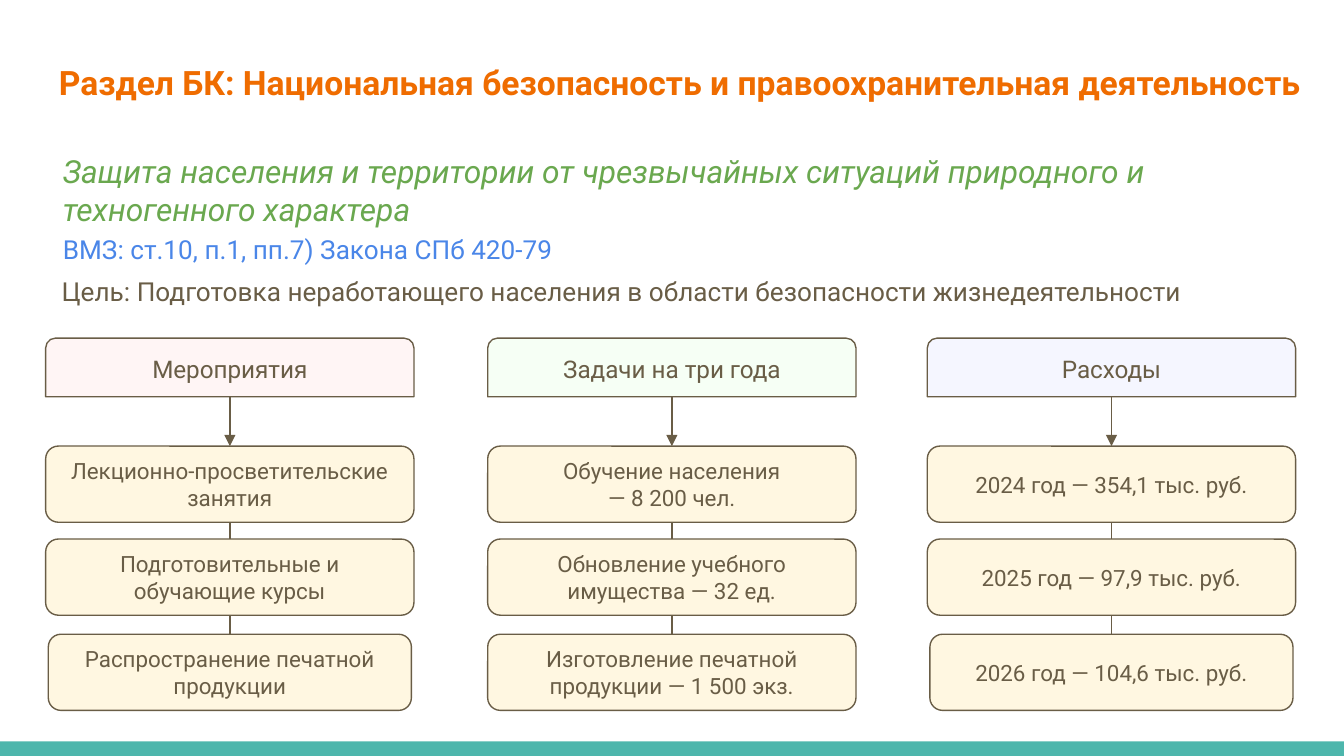
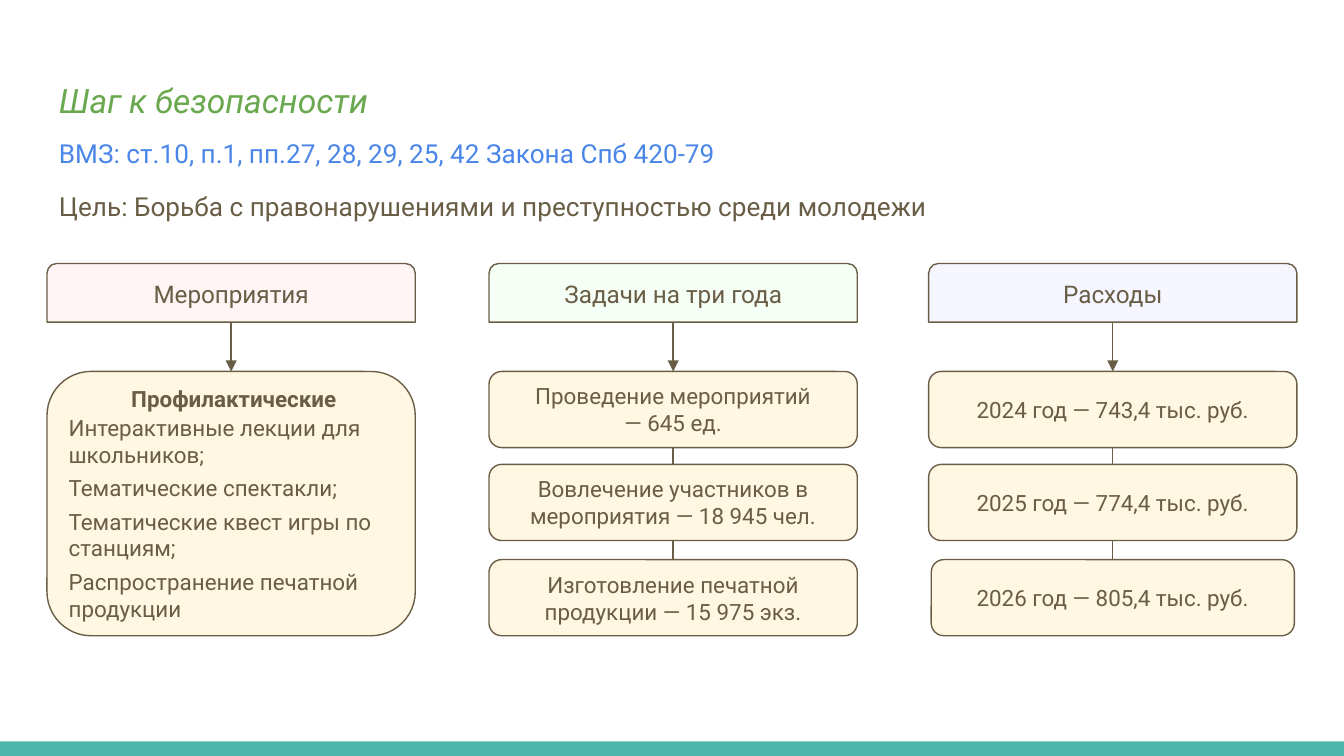
from dataclasses import dataclass
from typing import Optional

import pptx
import pptx.dml.color
import pptx.enum.shapes
import pptx.enum.text
import pptx.oxml.ns
import pptx.util
from lxml import etree
from pptx.shapes.autoshape import Shape
from pptx.slide import Slide
from pptx.text.text import TextFrame

Pt = pptx.util.Pt
SHAPES = pptx.enum.shapes.MSO_SHAPE
ANCHOR = pptx.enum.text.MSO_ANCHOR
ALIGN = pptx.enum.text.PP_ALIGN

# Shared look
FONT = "Roboto"
BROWN, ORANGE, GREEN, BLUE = "695D46", "EF6C00", "6AA84F", "4A86E8"
TEAL, CREAM, WHITE = "4DB6AC", "FFF7E1", "FFFFFF"
PAGE_WIDTH, PAGE_HEIGHT, BAND_HEIGHT = 720, 405, 7.8
INSET = 7.2

# Flow grid, measured from the top of the column headers
COLUMN_WIDTH, HEADER_HEIGHT, BOX_HEIGHT = 197.3, 31.4, 40.8
ROW_OFFSETS = (57.8, 107.6, 158.6)
LAST_BOX_INSET = 1.4


@dataclass(frozen=True)
class Heading:
    text: str
    left: float
    top: float
    width: float
    size: float
    color: str
    bold: bool = False
    italic: bool = False
    spacing: Optional[float] = None


@dataclass(frozen=True)
class Column:
    title: str
    left: float
    fill: str
    narrow_last: bool = False


@dataclass(frozen=True)
class Topic:
    headings: tuple[Heading, ...]
    flow_left: float
    flow_top: float
    boxes: tuple[tuple[str, ...], ...]


COLUMNS = (
    Column("Мероприятия", 0, "FFF5F5", narrow_last=True),
    Column("Задачи на три года", 236.8, "F6FFF5"),
    Column("Расходы", 472.3, "F5F6FF", narrow_last=True),
)

PREVENTION_TITLE = "Профилактические"
PREVENTION_ITEMS = (
    "Интерактивные лекции для школьников;",
    "Тематические спектакли;",
    "Тематические квест игры по станциям;",
    "Распространение печатной продукции",
)

PROTECTION = Topic(
    headings=(
        Heading("Раздел БК: Национальная безопасность и правоохранительная деятельность",
                24.5, 23, 681.1, 18, ORANGE, bold=True, spacing=1.15),
        Heading("Защита населения и территории от чрезвычайных ситуаций природного "
                "и техногенного характера", 26.6, 74.2, 681.1, 17, GREEN, italic=True),
        Heading("ВМЗ: ст.10, п.1, пп.7) Закона СПб 420-79", 26.6, 118.1, 676.8, 14, BLUE),
        Heading("Цель: Подготовка неработающего населения в области безопасности "
                "жизнедеятельности", 25.9, 140.4, 668.2, 14, BROWN),
    ),
    flow_left=24.5,
    flow_top=181.2,
    boxes=(
        ("Лекционно-просветительские занятия",
         "Подготовительные и обучающие курсы",
         "Распространение печатной продукции"),
        ("Обучение населения\n— 8 200 чел.",
         "Обновление учебного имущества — 32 ед.",
         "Изготовление печатной продукции — 1 500 экз."),
        ("2024 год — 354,1 тыс. руб.",
         "2025 год — 97,9 тыс. руб.",
         "2026 год — 104,6 тыс. руб."),
    ),
)

SAFETY_STEP = Topic(
    headings=(
        Heading("Шаг к безопасности", 24.5, 32.4, 671, 18, GREEN, italic=True, spacing=1.15),
        Heading("ВМЗ: ст.10, п.1, пп.27, 28, 29, 25, 42 Закона Спб 420-79",
                24.5, 66.2, 676.1, 14, BLUE),
        Heading("Цель: Борьба с правонарушениями и преступностью среди молодежи",
                24.5, 95, 665.3, 14, BROWN),
    ),
    flow_left=25.2,
    flow_top=141.2,
    boxes=(
        (),
        ("Проведение мероприятий\n— 645 ед.",
         "Вовлечение участников в мероприятия — 18 945 чел.",
         "Изготовление печатной продукции — 15 975 экз."),
        ("2024 год — 743,4 тыс. руб.",
         "2025 год — 774,4 тыс. руб.",
         "2026 год — 805,4 тыс. руб."),
    ),
)


def rgb(value: str) -> pptx.dml.color.RGBColor:
    return pptx.dml.color.RGBColor.from_string(value)


def write(frame: TextFrame, text: str, *, size: float, color: str = BROWN,
          bold: bool = False, italic: bool = False, align: ALIGN = ALIGN.LEFT,
          spacing: Optional[float] = None, before: float = 0) -> None:
    """Add each line of text as a paragraph, starting in an empty first one."""
    for line in text.split("\n"):
        para = frame.paragraphs[0] if not frame.text else frame.add_paragraph()
        para.alignment = align
        para.space_before = Pt(before)
        if spacing:
            para.line_spacing = spacing
        span = para.add_run()
        span.text = line
        span.font.name = FONT
        span.font.size = Pt(size)
        span.font.bold = bold
        span.font.italic = italic
        span.font.color.rgb = rgb(color)


def set_frame(frame: TextFrame, anchor: ANCHOR, left: float = INSET, top: float = 0,
              right: float = INSET, bottom: float = 0) -> None:
    frame.word_wrap = True
    frame.vertical_anchor = anchor
    frame.margin_left, frame.margin_top = Pt(left), Pt(top)
    frame.margin_right, frame.margin_bottom = Pt(right), Pt(bottom)


def add_box(page: Slide, kind: SHAPES, left: float, top: float, width: float,
            height: float, fill: str, outline: Optional[str] = BROWN) -> Shape:
    box = page.shapes.add_shape(kind, Pt(left), Pt(top), Pt(width), Pt(height))
    box.shadow.inherit = False
    box.fill.solid()
    box.fill.fore_color.rgb = rgb(fill)
    if outline:
        box.line.color.rgb = rgb(outline)
        box.line.width = Pt(0.75)
    else:
        box.line.fill.background()
    set_frame(box.text_frame, ANCHOR.MIDDLE)
    return box


def add_heading(page: Slide, heading: Heading) -> None:
    box = page.shapes.add_textbox(Pt(heading.left), Pt(heading.top),
                                  Pt(heading.width), Pt(31.7))
    set_frame(box.text_frame, ANCHOR.TOP, INSET, INSET, INSET, INSET)
    write(box.text_frame, heading.text, size=heading.size, color=heading.color,
          bold=heading.bold, italic=heading.italic, spacing=heading.spacing)


def add_link(page: Slide, upper: Shape, lower: Shape, arrow: bool) -> None:
    middle = upper.left + upper.width // 2
    line = page.shapes.add_connector(pptx.enum.shapes.MSO_CONNECTOR.STRAIGHT, middle,
                                     upper.top + upper.height, middle, lower.top)
    line.line.color.rgb = rgb(BROWN)
    line.line.width = Pt(0.75)
    if arrow:
        outline = line.line._get_or_add_ln()
        etree.SubElement(outline, pptx.oxml.ns.qn("a:tailEnd"), type="triangle")
    else:
        line.begin_connect(upper, 2)
    line.end_connect(lower, 0)
    etree.SubElement(line._element.spPr, pptx.oxml.ns.qn("a:effectLst"))


def add_prevention_box(page: Slide, left: float, top: float) -> Shape:
    height = ROW_OFFSETS[-1] - ROW_OFFSETS[0] + BOX_HEIGHT
    box = add_box(page, SHAPES.ROUNDED_RECTANGLE, left, top, COLUMN_WIDTH, height, CREAM)
    set_frame(box.text_frame, ANCHOR.TOP, left=4.7, top=0.3, right=1.7)
    write(box.text_frame, PREVENTION_TITLE, size=12, bold=True, align=ALIGN.CENTER)
    for index, item in enumerate(PREVENTION_ITEMS):
        write(box.text_frame, item, size=12, before=3.5 if index else 1.2)
    return box


def add_column(page: Slide, column: Column, topic: Topic, texts: tuple[str, ...]) -> None:
    left = topic.flow_left + column.left
    header = add_box(page, SHAPES.ROUND_2_SAME_RECTANGLE, left, topic.flow_top,
                     COLUMN_WIDTH, HEADER_HEIGHT, column.fill)
    write(header.text_frame, column.title, size=13, align=ALIGN.CENTER)
    if not texts:
        box = add_prevention_box(page, left, topic.flow_top + ROW_OFFSETS[0])
        add_link(page, header, box, arrow=True)
        return
    above = header
    for row, (text, offset) in enumerate(zip(texts, ROW_OFFSETS)):
        is_last = row == len(texts) - 1
        inset = LAST_BOX_INSET if is_last and column.narrow_last else 0
        box = add_box(page, SHAPES.ROUNDED_RECTANGLE, left + inset, topic.flow_top + offset,
                      COLUMN_WIDTH - 2 * inset, BOX_HEIGHT, CREAM)
        write(box.text_frame, text, size=12, align=ALIGN.CENTER)
        add_link(page, above, box, arrow=row == 0)
        above = box


def add_topic(deck: pptx.presentation.Presentation, topic: Topic) -> None:
    page = deck.slides.add_slide(deck.slide_layouts[6])
    page.background.fill.solid()
    page.background.fill.fore_color.rgb = rgb(WHITE)
    # Bottom band
    add_box(page, SHAPES.RECTANGLE, 0, PAGE_HEIGHT - BAND_HEIGHT, PAGE_WIDTH,
            BAND_HEIGHT, TEAL, outline=None)
    for heading in topic.headings:
        add_heading(page, heading)
    # Flow of three columns
    for column, texts in zip(COLUMNS, topic.boxes):
        add_column(page, column, topic, texts)


def main() -> None:
    deck = pptx.Presentation()
    deck.slide_width, deck.slide_height = Pt(PAGE_WIDTH), Pt(PAGE_HEIGHT)
    for topic in (PROTECTION, SAFETY_STEP):
        add_topic(deck, topic)
    deck.save("out.pptx")


if __name__ == "__main__":
    main()
